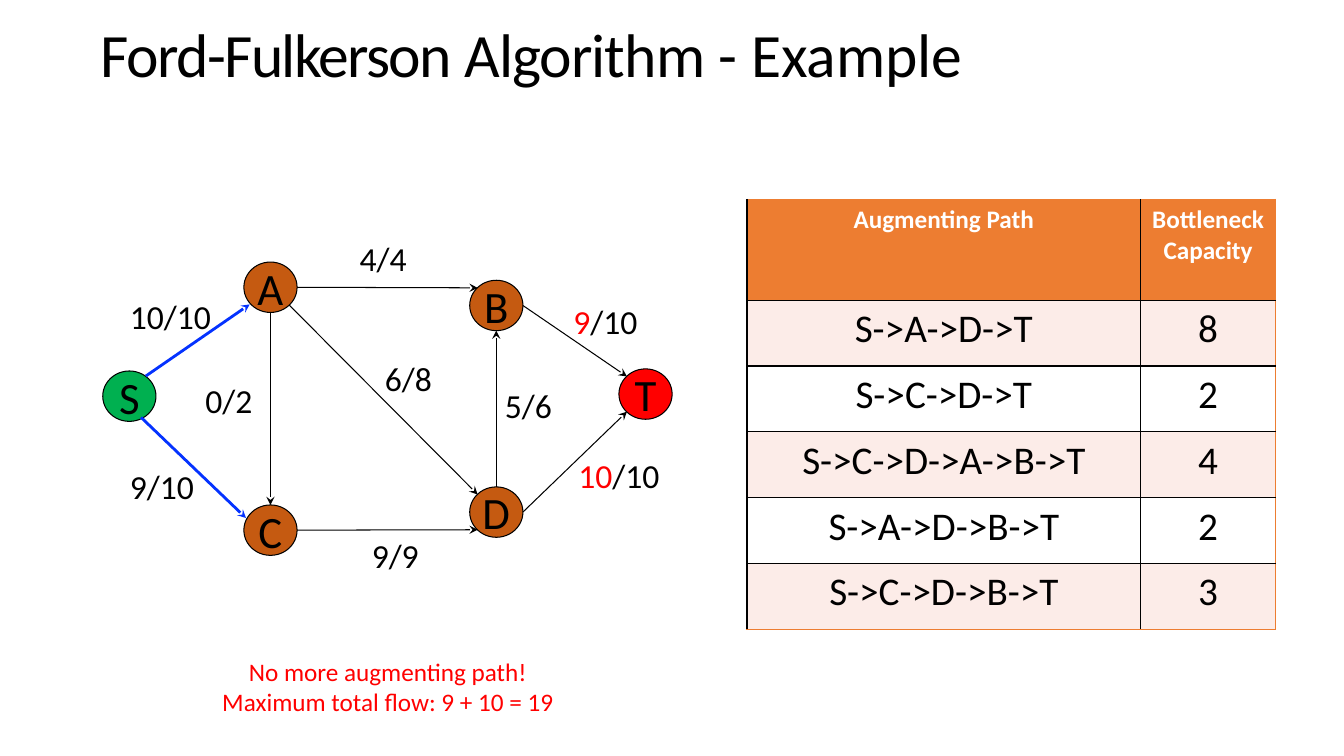
from lxml import etree
from pptx import Presentation
from pptx.dml.color import RGBColor
from pptx.enum.shapes import MSO_CONNECTOR, MSO_SHAPE
from pptx.enum.text import MSO_ANCHOR, MSO_AUTO_SIZE, PP_ALIGN
from pptx.oxml.ns import qn
from pptx.util import Pt

STRAIGHT, OVAL = MSO_CONNECTOR.STRAIGHT, MSO_SHAPE.OVAL
MIDDLE, NO_FIT = MSO_ANCHOR.MIDDLE, MSO_AUTO_SIZE.NONE
LEFT, CENTER = PP_ALIGN.LEFT, PP_ALIGN.CENTER

BLACK = RGBColor(0x00, 0x00, 0x00)
WHITE = RGBColor(0xFF, 0xFF, 0xFF)
RED = RGBColor(0xFF, 0x00, 0x00)
GREEN = RGBColor(0x00, 0xB0, 0x50)
BROWN = RGBColor(0xC5, 0x5A, 0x11)
BLUE = RGBColor(0x04, 0x32, 0xFF)
ORANGE = RGBColor(0xED, 0x7D, 0x31)
PALE = RGBColor(0xFC, 0xEC, 0xE8)
FONT = "Calibri"

NODE_WIDTH, NODE_HEIGHT = 38, 36
# Node name: left, top (within the graph), fill
NODES = {
    "S": (0, 99, GREEN),
    "A": (100.8, 21.2, BROWN),
    "B": (262.1, 34.2, BROWN),
    "C": (100.8, 194.7, BROWN),
    "D": (262.1, 181.8, BROWN),
    "T": (368.7, 97.5, RED),
}
# Points on a node, as fractions of its width and height
TOP, BOTTOM, RIGHT = (0.5, 0), (0.5, 1), (1, 0.5)
TOP_LEFT, BOTTOM_LEFT, BOTTOM_RIGHT = (0.15, 0.15), (0.15, 0.85), (0.85, 0.85)
EDGES = [
    ("A", RIGHT, "B", TOP_LEFT, BLACK, 0.75),
    ("A", BOTTOM, "C", TOP, BLACK, 0.75),
    ("A", BOTTOM_RIGHT, "D", TOP_LEFT, BLACK, 0.75),
    ("C", RIGHT, "D", BOTTOM_LEFT, BLACK, 0.75),
    ("D", TOP, "B", BOTTOM, BLACK, 0.75),
    ("B", RIGHT, "T", TOP_LEFT, BLACK, 0.75),
    ("D", RIGHT, "T", BOTTOM_LEFT, BLACK, 0.75),
    ("S", (0.81, 0.1), "A", (0.11, 0.84), BLUE, 2),
    ("S", (0.72, 0.92), "C", (0.04, 0.26), BLUE, 2),
]
# Flow, capacity, left, top, width, flow colour
FLOWS = [
    ("10", "10", 12.3, 42.1, 79, BLACK),
    ("9", "10", 12.3, 163, 69, BLACK),
    ("4", "4", 176.4, 0.3, 69, BLACK),
    ("9", "9", 185.1, 212.7, 69, BLACK),
    ("0", "2", 66.3, 101.8, 69, BLACK),
    ("6", "8", 194.4, 86, 69, BLACK),
    ("5", "6", 280.1, 105.4, 69, BLACK),
    ("9", "10", 329.1, 45.7, 69, RED),
    ("10", "10", 332.7, 155.1, 74, RED),
]
PATHS = [
    ("Augmenting Path", "Bottleneck Capacity"),
    ("S->A->D->T", "8"),
    ("S->C->D->T", "2"),
    ("S->C->D->A->B->T", "4"),
    ("S->A->D->B->T", "2"),
    ("S->C->D->B->T", "3"),
]


def add_text(paragraph, text, size=18, color=BLACK, bold=False, align=LEFT, spacing=0):
    paragraph.alignment = align
    run = paragraph.add_run()
    run.text = text
    font = run.font
    font.name, font.size, font.bold = FONT, Pt(size), bold
    font.color.rgb = color
    if spacing:
        run._r.get_or_add_rPr().set("spc", str(round(spacing * 100)))


def add_title(slide, left, top, width, height):
    title = slide.shapes.title
    title.left, title.top, title.width, title.height = map(Pt, (left, top, width, height))
    frame = title.text_frame
    frame.auto_size, frame.vertical_anchor = NO_FIT, MIDDLE
    paragraph = frame.paragraphs[0]
    paragraph.line_spacing = 0.9
    for text, spacing in (("Ford-Fulkerson ", -1.2), ("Algorithm ", -0.7), ("- Example", 0)):
        add_text(paragraph, text, size=44, spacing=spacing)


def add_node(slide, name, left, top, fill):
    node = slide.shapes.add_shape(OVAL, Pt(left), Pt(top), Pt(NODE_WIDTH), Pt(NODE_HEIGHT))
    node.shadow.inherit = False
    node.fill.solid()
    node.fill.fore_color.rgb = fill
    node.line.color.rgb = BLACK
    node.line.width = Pt(0.75)
    frame = node.text_frame
    frame.word_wrap, frame.vertical_anchor = False, MIDDLE
    add_text(frame.paragraphs[0], name, size=32, align=CENTER)


def add_edge(slide, start, end, color, width):
    edge = slide.shapes.add_connector(STRAIGHT, *map(Pt, start + end))
    edge.line.color.rgb = color
    edge.line.width = Pt(width)
    properties = edge._element.spPr
    etree.SubElement(properties.find(qn("a:ln")), qn("a:tailEnd"), type="stealth")
    etree.SubElement(properties, qn("a:effectLst"))


def add_graph(slide, left, top):
    def node_point(name, fractions):
        node_left, node_top, _ = NODES[name]
        return (left + node_left + fractions[0] * NODE_WIDTH,
                top + node_top + fractions[1] * NODE_HEIGHT)

    # Nodes
    for name, (x, y, fill) in NODES.items():
        add_node(slide, name, left + x, top + y, fill)
    # Directed edges
    for source, source_side, target, target_side, color, width in EDGES:
        add_edge(slide, node_point(source, source_side), node_point(target, target_side),
                 color, width)
    # Flow / capacity labels
    for flow, capacity, x, y, width, color in FLOWS:
        label = slide.shapes.add_textbox(Pt(left + x), Pt(top + y), Pt(width), Pt(36))
        label.text_frame.word_wrap = True
        paragraph = label.text_frame.paragraphs[0]
        add_text(paragraph, flow, size=24, color=color)
        add_text(paragraph, "/" + capacity, size=24)


def format_cell(cell, fill, borders):
    properties = cell._tc.get_or_add_tcPr()
    for side, color in zip("LRTB", borders):
        line = etree.SubElement(properties, qn("a:ln" + side), w=str(Pt(1)))
        solid = etree.SubElement(line, qn("a:solidFill"))
        etree.SubElement(solid, qn("a:srgbClr"), val=str(color))
    cell.fill.solid()
    cell.fill.fore_color.rgb = fill


def add_path_table(slide, left, top, width, height):
    header_height, capacity_width = 72, 96.3
    last = len(PATHS) - 1
    table = slide.shapes.add_table(len(PATHS), 2, Pt(left), Pt(top), Pt(width), Pt(height)).table
    table.first_row = table.horz_banding = False
    table.columns[0].width = Pt(width - capacity_width)
    table.columns[1].width = Pt(capacity_width)
    for index, row in enumerate(PATHS):
        header = index == 0
        table.rows[index].height = Pt(header_height if header else (height - header_height) / last)
        fill = ORANGE if header else PALE if index % 2 else WHITE
        for column, text in enumerate(row):
            cell = table.cell(index, column)
            format_cell(cell, fill, (BLACK, ORANGE if column else BLACK,
                                     ORANGE if header else BLACK,
                                     ORANGE if index == last else BLACK))
            add_text(cell.text_frame.paragraphs[0], text, size=18 if header else 28,
                     color=WHITE if header else BLACK, bold=header, align=CENTER)


def add_conclusion(slide, left, top, width, height):
    box = slide.shapes.add_textbox(Pt(left), Pt(top), Pt(width), Pt(height))
    frame = box.text_frame
    frame.word_wrap = False
    add_text(frame.paragraphs[0], "No more augmenting path!", color=RED, align=CENTER)
    add_text(frame.add_paragraph(), "Maximum total flow: 9 + 10 = 19", color=RED, align=CENTER)


def main():
    presentation = Presentation()
    presentation.slide_width, presentation.slide_height = Pt(960), Pt(540)
    slide = presentation.slides.add_slide(presentation.slide_layouts[5])
    add_title(slide, 64.8, 8, 696, 66)
    add_graph(slide, 73.4, 166)
    add_path_table(slide, 533.5, 142.5, 377.6, 307)
    add_conclusion(slide, 150, 465, 254, 51)
    presentation.save("out.pptx")


if __name__ == "__main__":
    main()
